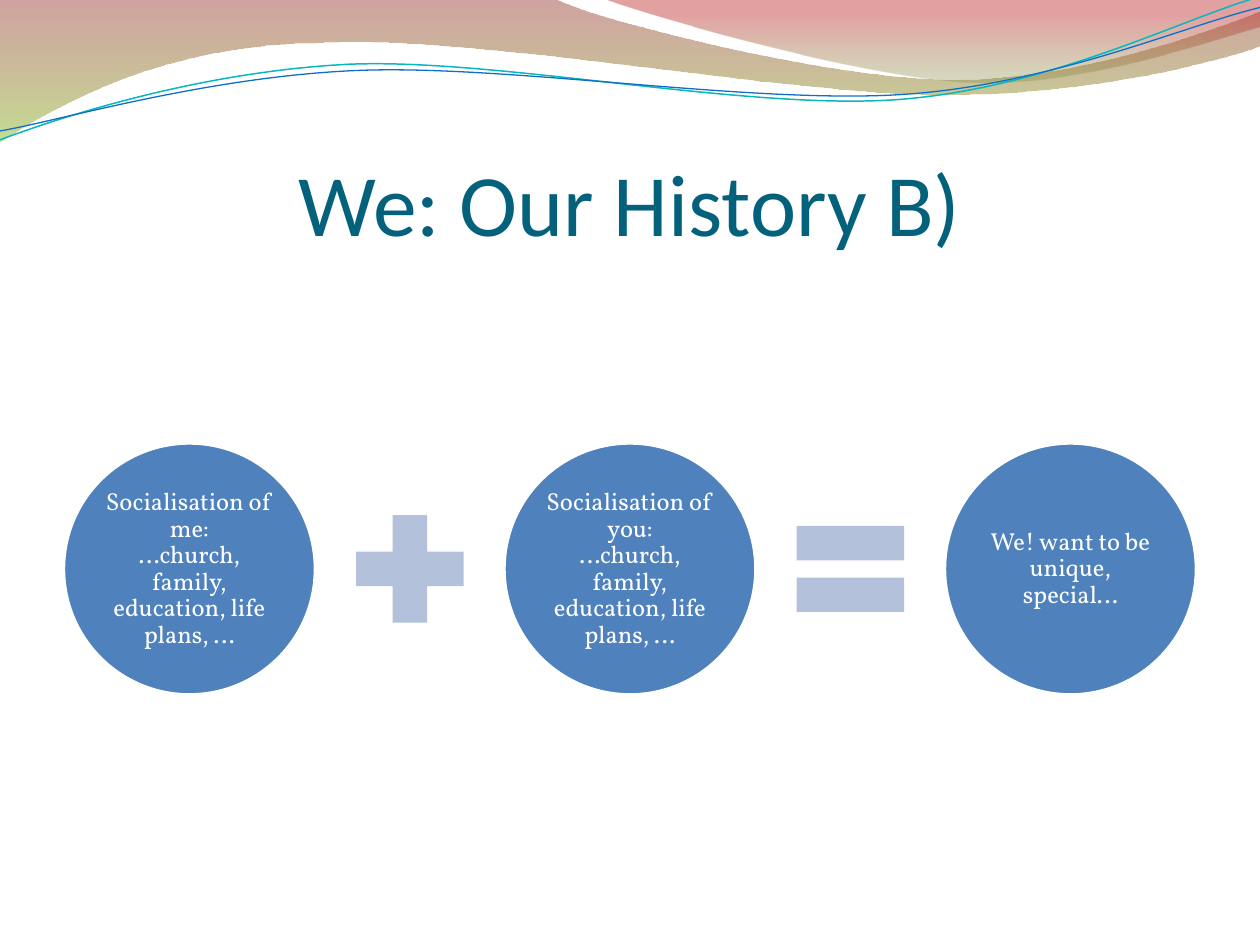
from math import cos, radians, sin

from lxml import etree
from pptx import Presentation
from pptx.dml.color import RGBColor
from pptx.enum.shapes import MSO_SHAPE
from pptx.enum.text import MSO_ANCHOR, PP_ALIGN
from pptx.oxml.ns import qn
from pptx.util import Cm, Pt

OVAL, PLUS, EQUAL = MSO_SHAPE.OVAL, MSO_SHAPE.MATH_PLUS, MSO_SHAPE.MATH_EQUAL
MIDDLE, BOTTOM, CENTER = MSO_ANCHOR.MIDDLE, MSO_ANCHOR.BOTTOM, PP_ALIGN.CENTER

WHITE = RGBColor(0xFF, 0xFF, 0xFF)
TITLE_TEAL = RGBColor(0x04, 0x61, 0x7B)
CIRCLE_BLUE = RGBColor(0x4F, 0x81, 0xBD)
SIGN_BLUE = RGBColor(0xB3, 0xC1, 0xDB)
LINE_CYAN = RGBColor(0x09, 0xB7, 0xBF)
LINE_BLUE = RGBColor(0x0F, 0x6F, 0xC6)
DARK_RED = RGBColor(0x97, 0x33, 0x30)
LIGHT_GREEN = RGBColor(0x95, 0xC2, 0x38)
DARK_GREEN = RGBColor(0x76, 0x95, 0x37)
LIGHT_RED = RGBColor(0xBE, 0x33, 0x30)

UNIT = 2.54  # wave coordinates are in tenths of the page width
TILT = 2.7   # degrees by which the thin waves lean to the left

deck = Presentation()
deck.slide_width, deck.slide_height = Cm(25.4), Cm(19.05)
page = deck.slides.add_slide(deck.slide_layouts[6])


def add_wave(segments, close, tilt=0, center=(0, 0)):
    """Draw a path of points (2 values) and cubic curves (6 values)."""
    turn_cos, turn_sin = cos(radians(tilt)), sin(radians(tilt))
    spots = []
    for segment in segments:
        for x, y in zip(segment[::2], segment[1::2]):
            dx, dy = x - center[0], y - center[1]
            spots.append((Cm((center[0] + dx * turn_cos - dy * turn_sin) * UNIT),
                          Cm((center[1] + dx * turn_sin + dy * turn_cos) * UNIT)))
    builder = page.shapes.build_freeform(*spots[0])
    builder.add_line_segments(spots[1:], close=close)
    wave = builder.convert_to_shape()
    wave.rotation = -tilt
    wave.shadow.inherit = False
    # Join each three control points into one cubic curve
    steps = iter(list(wave._element.iter(qn("a:lnTo"))))
    for segment in segments[1:]:
        first = next(steps)
        if len(segment) == 6:
            first.tag = qn("a:cubicBezTo")
            for _ in range(2):
                extra = next(steps)
                first.append(extra[0])
                extra.getparent().remove(extra)
    return wave


def fill_text(box, lines, frame_format, para_format, font_format, color):
    """Write one paragraph per line with the given formats."""
    frame = box.text_frame
    for name, value in frame_format.items():
        setattr(frame, name, value)
    for index, line in enumerate(lines):
        para = frame.paragraphs[0] if index == 0 else frame.add_paragraph()
        for name, value in para_format.items():
            setattr(para, name, value)
        span = para.add_run()
        span.text = line
        for name, value in font_format.items():
            setattr(span.font, name, value)
        span.font.color.rgb = color


# Gradient bands at the top: outline, angle, stops (position, colour, opacity %)
bands = [
    ([(0, 0), (4.4, -0.01), (4.76, 0.17, 6.63, 0.63, 7.58, 0.63),
      (8.53, 0.63, 9.58, 0.26, 10, 0.09), (10.01, 0.36),
      (9.83, 0.44, 8.69, 0.76, 7.46, 0.75), (6.22, 0.75, 3.82, 0.28, 2.57, 0.34),
      (1.29, 0.35, 0.46, 0.83, -0.01, 1.13)],
     270, [(0, DARK_RED, 45), (1, LIGHT_GREEN, 55)]),
    ([(4.79, -0.01), (5.09, 0.11, 6.82, 0.61, 7.69, 0.65),
      (8.55, 0.69, 9.61, 0.32, 10, 0.21), (10, 0)],
     90, [(0, DARK_GREEN, 30), (0.8, LIGHT_RED, 45)]),
]
for outline, angle, stops in bands:
    band = add_wave(outline, True)
    band.line.fill.background()
    band.fill.gradient()
    band.fill.gradient_angle = angle
    for stop, (position, color, opacity) in zip(band.fill.gradient_stops, stops):
        stop.position = position
        stop.color.rgb = color
    color_nodes = band.fill._xPr.iter(qn("a:srgbClr"))
    for node, (position, color, opacity) in zip(color_nodes, stops):
        etree.SubElement(node, qn("a:alpha")).set("val", str(opacity * 1000))

# Thin wave lines: outline, centre, colour, width
threads = [
    ([(0, 1.11), (0.48, 0.93, 1.58, 0.57, 2.77, 0.51),
      (3.95, 0.46, 5.92, 0.88, 7.13, 0.79), (8.33, 0.7, 9.38, 0.15, 9.98, -0.02)],
     (4.99, 0.57), LINE_CYAN, 0.85),
    ([(0, 1.04), (0.47, 0.96, 1.64, 0.61, 2.83, 0.56),
      (4.02, 0.51, 5.97, 0.83, 7.17, 0.75), (8.36, 0.67, 9.41, 0.2, 10, 0.06)],
     (5, 0.59), LINE_BLUE, 0.75),
]
for outline, center, color, width in threads:
    thread = add_wave(outline, False, TILT, center)
    thread.fill.background()
    thread.line.color.rgb = color
    thread.line.width = Pt(width)

# Title
title = page.shapes.add_textbox(Cm(1.27), Cm(1.95), Cm(22.86), Cm(3.17))
fill_text(title, ["We: Our History B)"],
          {"word_wrap": True, "vertical_anchor": BOTTOM, "margin_left": 0,
           "margin_right": 0, "margin_top": Cm(0.13), "margin_bottom": 0},
          {"alignment": CENTER}, {"name": "Calibri", "size": Pt(50)}, TITLE_TEAL)

# Equation: circles joined by a plus and an equals sign
LEFT, STEP, DIAMETER, CIRCLE_TOP = 1.28, 8.88, 5.08, 8.93
SIGN_LEFT, SIGN_SIZE = 6.79, 2.95
SIGN_TOP = CIRCLE_TOP + (DIAMETER - SIGN_SIZE) / 2
background = "…church, family, education, life plans, …"
terms = [
    ["Socialisation of me:", background],
    ["Socialisation of you:", background],
    ["We! want to be unique, special…"],
]
signs = [(PLUS, [0.235]), (EQUAL, [0.235, 0.118])]
circle_frame = {"word_wrap": True, "vertical_anchor": MIDDLE}
for side in ("left", "right", "top", "bottom"):
    circle_frame["margin_" + side] = Cm(0.05)

for index, lines in enumerate(terms):
    circle = page.shapes.add_shape(OVAL, Cm(LEFT + index * STEP), Cm(CIRCLE_TOP),
                                   Cm(DIAMETER), Cm(DIAMETER))
    circle.shadow.inherit = False
    circle.fill.solid()
    circle.fill.fore_color.rgb = CIRCLE_BLUE
    circle.line.color.rgb = WHITE
    circle.line.width = Pt(2)
    fill_text(circle, lines, circle_frame, {"alignment": CENTER, "line_spacing": 0.9},
              {"name": "Vollkorn", "size": Pt(14)}, WHITE)
    if index < len(signs):
        kind, adjustments = signs[index]
        sign = page.shapes.add_shape(kind, Cm(SIGN_LEFT + index * STEP), Cm(SIGN_TOP),
                                     Cm(SIGN_SIZE), Cm(SIGN_SIZE))
        sign.shadow.inherit = False
        sign.fill.solid()
        sign.fill.fore_color.rgb = SIGN_BLUE
        sign.line.fill.background()
        for number, value in enumerate(adjustments):
            sign.adjustments[number] = value

deck.save("out.pptx")
